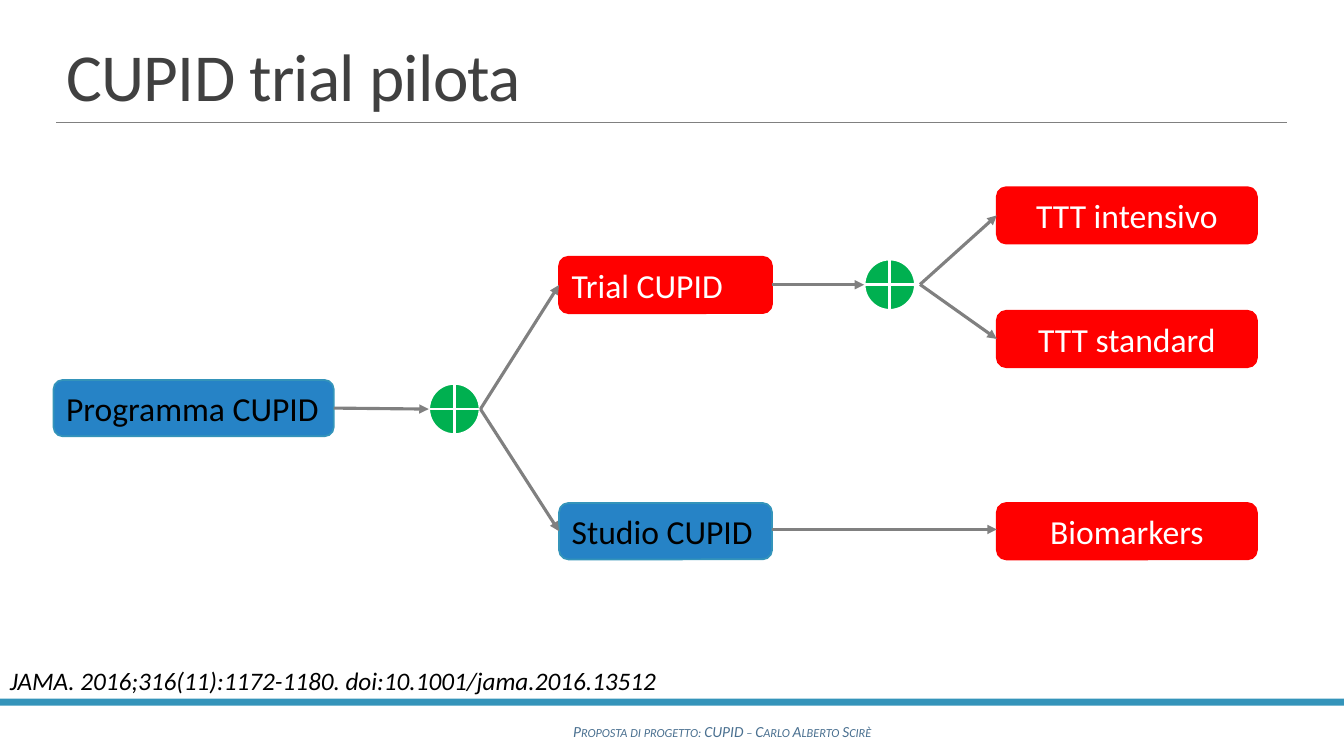
from lxml.etree import SubElement
from pptx import Presentation
from pptx.dml.color import RGBColor
from pptx.enum.shapes import MSO_CONNECTOR, MSO_SHAPE
from pptx.enum.text import MSO_ANCHOR, MSO_AUTO_SIZE, PP_ALIGN
from pptx.oxml.ns import qn
from pptx.util import Pt

FONT = "Calibri"
BLACK = RGBColor(0x00, 0x00, 0x00)
WHITE = RGBColor(0xFF, 0xFF, 0xFF)
RED = RGBColor(0xFF, 0x00, 0x00)
GREEN = RGBColor(0x00, 0xB0, 0x50)
BLUE = RGBColor(0x26, 0x83, 0xC6)
TEAL = RGBColor(0x34, 0x94, 0xBA)
GRAY = RGBColor(0x80, 0x80, 0x80)
DARK_GRAY = RGBColor(0x40, 0x40, 0x40)
SLATE = RGBColor(0x4A, 0x70, 0x90)

BOX_HEIGHT = 40.3
NODE_SIZE = 36.7
ARM_LEFT, ARM_WIDTH = 712, 185.8
STUDY_LEFT, STUDY_WIDTH = 399.3, 152.2


def write(paragraph, text, size, color, italic=False):
    """Add one formatted run to a paragraph and return it."""
    run = paragraph.add_run()
    run.text = text
    run.font.name = FONT
    run.font.size = Pt(size)
    run.font.italic = italic
    run.font.color.rgb = color
    return run


def add_title(slide, text):
    """Place and fill the title placeholder."""
    title = slide.shapes.title
    title.left, title.top = Pt(40.3), Pt(22.3)
    title.width, title.height = Pt(879), Pt(63.4)
    frame = title.text_frame
    frame.vertical_anchor = MSO_ANCHOR.BOTTOM
    paragraph = frame.paragraphs[0]
    paragraph.alignment = PP_ALIGN.LEFT
    paragraph.line_spacing = 0.85
    run = write(paragraph, text, 48, DARK_GRAY)
    run.font._element.set("spc", "-50")


def add_solid(slide, preset, left, top, width, height, fill, line=None, weight=1.25):
    """Add a flat preset shape with an optional outline."""
    solid = slide.shapes.add_shape(preset, Pt(left), Pt(top), Pt(width), Pt(height))
    solid.shadow.inherit = False
    solid.fill.solid()
    solid.fill.fore_color.rgb = fill
    if line is None:
        solid.line.fill.background()
    else:
        solid.line.color.rgb = line
        solid.line.width = Pt(weight)
    return solid


def add_box(slide, text, left, top, width, fill, line, color,
            align=PP_ALIGN.LEFT, wrap=True):
    """Add a rounded, labelled box of the flow chart."""
    box = add_solid(slide, MSO_SHAPE.ROUNDED_RECTANGLE,
                    left, top, width, BOX_HEIGHT, fill, line)
    frame = box.text_frame
    frame.word_wrap = wrap
    frame.auto_size = MSO_AUTO_SIZE.SHAPE_TO_FIT_TEXT
    paragraph = frame.paragraphs[0]
    paragraph.alignment = align
    write(paragraph, text, 24, color)


def add_randomization(slide, left, top):
    """Add a crossed circle that marks a split of the flow."""
    add_solid(slide, MSO_SHAPE.FLOWCHART_OR, left, top,
              NODE_SIZE, NODE_SIZE, GREEN, WHITE, 2)


def add_line(slide, start, end, weight, arrow=False):
    """Add a gray straight line, with an arrowhead at its end if asked."""
    line = slide.shapes.add_connector(
        MSO_CONNECTOR.STRAIGHT, *(Pt(value) for value in (*start, *end)))
    line.line.color.rgb = GRAY
    line.line.width = Pt(weight)
    if arrow:
        SubElement(line.line._get_or_add_ln(), qn("a:tailEnd"), type="triangle")
    SubElement(line._element.spPr, qn("a:effectLst"))


def add_caption(slide, text, left, top, width, height, size, color,
                align=PP_ALIGN.LEFT, wrap=True):
    """Add an italic text box and return its run."""
    caption = slide.shapes.add_textbox(Pt(left), Pt(top), Pt(width), Pt(height))
    frame = caption.text_frame
    frame.word_wrap = wrap
    frame.auto_size = MSO_AUTO_SIZE.SHAPE_TO_FIT_TEXT
    paragraph = frame.paragraphs[0]
    paragraph.alignment = align
    return write(paragraph, text, size, color, italic=True)


def add_frame(slide):
    """Add the title rule, the bottom band and the footer."""
    add_solid(slide, MSO_SHAPE.RECTANGLE, 0, 499, 960, 5, TEAL)
    add_line(slide, (40.3, 87.1), (919.4, 87.1), 0.5)
    footer = add_caption(slide, "Proposta di progetto: CUPID – Carlo Alberto Scirè",
                         185.8, 512, 660.2, 20.9, 11, SLATE, PP_ALIGN.CENTER)
    footer.font._element.set("cap", "small")


def add_flow(slide):
    """Add the boxes, the splits and the arrows of the trial."""
    add_box(slide, "Programma CUPID", 38.2, 271.4, 200.2, BLUE, TEAL, BLACK, wrap=False)
    add_box(slide, "Trial CUPID", STUDY_LEFT, 183.4, STUDY_WIDTH, RED, RED, WHITE)
    add_box(slide, "Studio CUPID", STUDY_LEFT, 359.3, STUDY_WIDTH, BLUE, TEAL, BLACK)
    for arm, top in (("TTT intensivo", 133.7), ("TTT standard", 222), ("Biomarkers", 359.3)):
        add_box(slide, arm, ARM_LEFT, top, ARM_WIDTH, RED, RED, WHITE, PP_ALIGN.CENTER)

    add_randomization(slide, 306.2, 273.8)
    add_randomization(slide, 617.2, 185)

    study_split, arm_split = (343.2, 292.2), (657.2, 203.2)
    study_right = STUDY_LEFT + STUDY_WIDTH
    for start, end in (
        ((238.4, 291.5), (306.2, 292.2)),
        (study_split, (STUDY_LEFT, 203.6)),
        (study_split, (STUDY_LEFT, 379.4)),
        ((study_right, 203.4), (617.2, 203.4)),
        (arm_split, (ARM_LEFT, 153.9)),
        (arm_split, (ARM_LEFT, 242.1)),
        ((study_right, 378.2), (ARM_LEFT, 378.2)),
    ):
        add_line(slide, start, end, 2.25, arrow=True)


def main():
    """Build the slide and save it."""
    deck = Presentation()
    deck.slide_width, deck.slide_height = Pt(960), Pt(540)
    slide = deck.slides.add_slide(deck.slide_layouts[5])
    add_frame(slide)
    add_title(slide, "CUPID trial pilota")
    add_flow(slide)
    add_caption(slide, "JAMA. 2016;316(11):1172-1180. doi:10.1001/jama.2016.13512",
                0, 471.6, 480, 29, 18, BLACK, wrap=False)
    deck.save("out.pptx")


if __name__ == "__main__":
    main()
